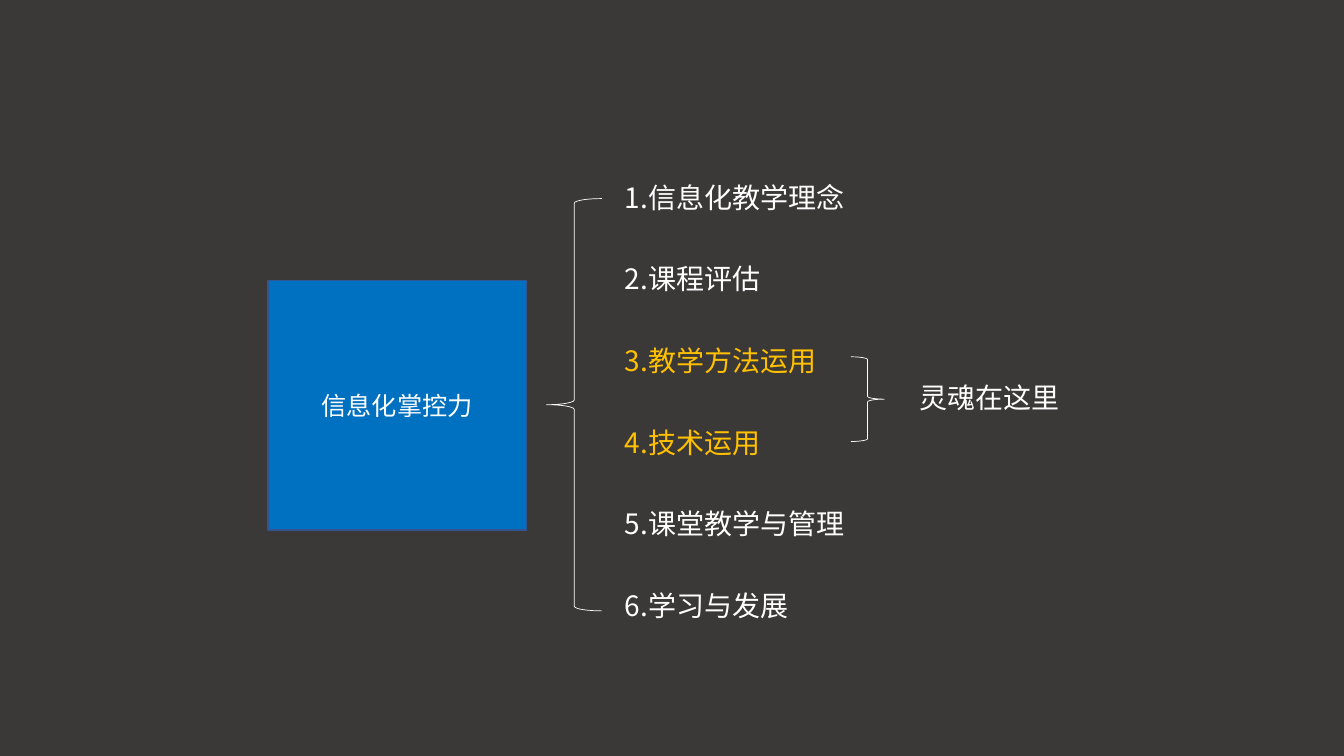
from dataclasses import dataclass

from lxml import etree
from pptx import Presentation
from pptx.dml import color as c
from pptx.enum import shapes as s, text as t
from pptx.oxml import ns
from pptx.util import Inches, Pt

HUES = {"back": "3B3838", "box": "0070C0", "edge": "325491",
        "white": "FFFFFF", "gold": "FFC000"}
CJK = "Noto Sans CJK SC"
TOP, STEP = 1.55, 0.81


@dataclass
class Area:
    left: float
    top: float
    width: float
    height: float

    def size(self) -> list:
        return [Inches(v) for v in (self.left, self.top, self.width, self.height)]


@dataclass
class Label:
    words: str
    area: Area
    hue: str = "white"


@dataclass
class Brace:
    kind: s.MSO_SHAPE
    area: Area


def tint(name: str) -> c.RGBColor:
    return c.RGBColor.from_string(HUES[name])


def write(frame, words: str, size: int, face: str, hue: str) -> None:
    frame.text = words
    frame.word_wrap = True
    frame.vertical_anchor = t.MSO_ANCHOR.MIDDLE
    font = frame.paragraphs[0].runs[0].font
    font.size = Pt(size)
    font.name = face
    font.color.rgb = tint(hue)
    east = etree.Element(ns.qn("a:ea"), typeface=CJK)
    font._element.find(ns.qn("a:latin")).addnext(east)


def add_box(slide, label: Label) -> None:
    box = slide.shapes.add_shape(s.MSO_SHAPE.RECTANGLE, *label.area.size())
    box.shadow.inherit = False
    box.fill.solid()
    box.fill.fore_color.rgb = tint("box")
    box.line.color.rgb = tint("edge")
    box.line.width = Pt(1)
    write(box.text_frame, label.words, 18, "Calibri", label.hue)
    box.text_frame.paragraphs[0].alignment = t.PP_ALIGN.CENTER


def add_brace(slide, brace: Brace) -> None:
    shape = slide.shapes.add_shape(brace.kind, *brace.area.size())
    shape.shadow.inherit = False
    shape.fill.background()
    shape.line.color.rgb = tint("white")
    shape.line.width = Pt(0.5)


def add_label(slide, label: Label) -> None:
    frame = slide.shapes.add_textbox(*label.area.size()).text_frame
    write(frame, label.words, 20, CJK, label.hue)
    frame.paragraphs[0].line_spacing = 0.9


def main() -> None:
    deck = Presentation()
    deck.slide_width, deck.slide_height = Inches(13.33), Inches(7.5)
    slide = deck.slides.add_slide(deck.slide_layouts[6])
    slide.background.fill.solid()
    slide.background.fill.fore_color.rgb = tint("back")

    skills = [("信息化教学理念", "white"), ("课程评估", "white"),
              ("教学方法运用", "gold"), ("技术运用", "gold"),
              ("课堂教学与管理", "white"), ("学习与发展", "white")]
    labels = [Label(f"{i + 1}.{words}", Area(6.1, TOP + i * STEP, 2.8, 0.85), hue)
              for i, (words, hue) in enumerate(skills)]
    labels.append(Label("灵魂在这里", Area(9.02, 3.54, 1.66, 0.85)))
    braces = [Brace(s.MSO_SHAPE.LEFT_BRACE, Area(5.42, 1.97, 0.55, 4.09)),
              Brace(s.MSO_SHAPE.RIGHT_BRACE, Area(8.44, 3.54, 0.33, 0.84))]

    add_box(slide, Label("信息化掌控力", Area(2.66, 2.78, 2.56, 2.48)))
    for brace in braces:
        add_brace(slide, brace)
    for label in labels:
        add_label(slide, label)
    deck.save("out.pptx")


if __name__ == "__main__":
    main()
